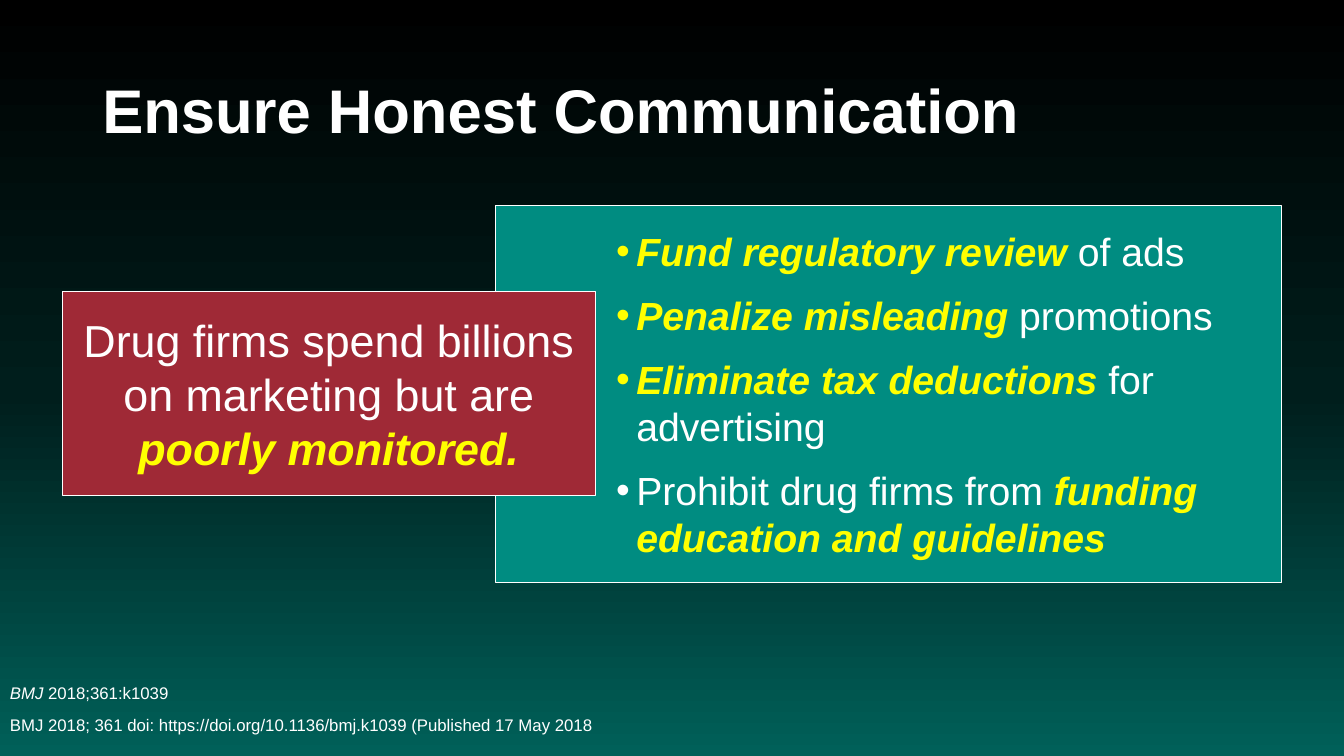
from copy import deepcopy
from dataclasses import dataclass

from lxml import etree
from pptx import Presentation
from pptx.dml.color import RGBColor
from pptx.enum.shapes import MSO_SHAPE
from pptx.enum.text import MSO_ANCHOR, MSO_AUTO_SIZE, PP_ALIGN
from pptx.oxml.ns import qn
from pptx.util import Pt

RECTANGLE = MSO_SHAPE.RECTANGLE
MIDDLE = MSO_ANCHOR.MIDDLE
GROW = MSO_AUTO_SIZE.SHAPE_TO_FIT_TEXT
LEFT = PP_ALIGN.LEFT
CENTER = PP_ALIGN.CENTER


@dataclass(frozen=True)
class Theme:
    font: str = "Arial"
    text: str = "FFFFFF"
    emphasis: str = "FFFF00"
    remedy: str = "008C81"
    problem: str = "9F2936"
    backdrop: tuple = ((0, "000000"), (0.52, "001E1C"), (1, "006059"))
    title_size: int = 44
    problem_size: int = 32
    remedy_size: int = 28
    source_size: int = 12
    outline: float = 0.75
    indent: float = 14.4
    inset: float = 14.4


class SlideBuilder:
    def __init__(self, slide, theme):
        self.slide = slide
        self.theme = theme

    def background(self):
        fill = self.slide.background.fill
        fill.gradient()
        fill.gradient_angle = 270
        stop_list = self.slide.element.find(".//" + qn("a:gsLst"))
        stop_list.append(deepcopy(stop_list[-1]))
        for stop, (position, color) in zip(fill.gradient_stops, self.theme.backdrop):
            stop.position = position
            stop.color.rgb = RGBColor.from_string(color)

    def add_phrases(self, paragraph, phrases, size):
        for words, style in phrases:
            run = paragraph.add_run()
            run.text = words
            font = run.font
            font.name = self.theme.font
            font.size = Pt(size)
            font.bold = style in ("bold", "emphasis")
            font.italic = style in ("italic", "emphasis")
            color = self.theme.emphasis if style == "emphasis" else self.theme.text
            font.color.rgb = RGBColor.from_string(color)

    def paragraphs(self, frame, lines):
        for index, phrases in enumerate(lines):
            yield frame.paragraphs[0] if index == 0 else frame.add_paragraph(), phrases

    def text(self, bounds, lines, size, gap=0):
        frame = self.slide.shapes.add_textbox(*map(Pt, bounds)).text_frame
        frame.word_wrap = True
        frame.vertical_anchor = MIDDLE
        for index, (paragraph, phrases) in enumerate(self.paragraphs(frame, lines)):
            paragraph.line_spacing = 0.9
            if index:
                paragraph.space_before = Pt(gap)
            self.add_phrases(paragraph, phrases, size)

    def panel(self, bounds, color, lines, size, left_inset, align=LEFT, bullets=False):
        panel = self.slide.shapes.add_shape(RECTANGLE, *map(Pt, bounds))
        panel.shadow.inherit = False
        panel.fill.solid()
        panel.fill.fore_color.rgb = RGBColor.from_string(color)
        panel.line.color.rgb = RGBColor.from_string(self.theme.text)
        panel.line.width = Pt(self.theme.outline)
        frame = panel.text_frame
        frame.word_wrap = True
        frame.auto_size = GROW
        frame.vertical_anchor = MIDDLE
        frame.margin_left = Pt(left_inset)
        frame.margin_top = frame.margin_right = frame.margin_bottom = Pt(self.theme.inset)
        for paragraph, phrases in self.paragraphs(frame, lines):
            paragraph.alignment = align
            if bullets:
                self.bullet(paragraph)
            self.add_phrases(paragraph, phrases, size)

    def bullet(self, paragraph):
        paragraph.space_after = Pt(12)
        properties = paragraph._p.get_or_add_pPr()
        properties.set("marL", str(Pt(self.theme.indent)))
        properties.set("indent", str(-Pt(self.theme.indent)))
        etree.SubElement(properties, qn("a:buFont"), typeface=self.theme.font)
        etree.SubElement(properties, qn("a:buChar"), char="•")


def main():
    presentation = Presentation()
    presentation.slide_width = Pt(960)
    presentation.slide_height = Pt(540)
    theme = Theme()
    slide = presentation.slides.add_slide(presentation.slide_layouts[6])
    builder = SlideBuilder(slide, theme)

    builder.background()
    builder.text(
        (66, 28.8, 828, 104.4),
        [[("Ensure Honest Communication", "bold")]],
        theme.title_size,
    )
    sources = [
        [("BMJ", "italic"), (" 2018;361:k1039", "plain")],
        [("BMJ 2018; 361 doi: https://doi.org/10.1136/bmj.k1039 (Published 17 May 2018", "plain")],
    ]
    builder.text((0, 473.8, 648, 66.2), sources, theme.source_size, gap=10)

    remedies = [
        [("Fund regulatory review ", "emphasis"), ("of ads", "plain")],
        [("Penalize misleading ", "emphasis"), ("promotions", "plain")],
        [("Eliminate tax deductions ", "emphasis"), ("for advertising", "plain")],
        [("Prohibit drug firms from ", "plain"), ("funding education and guidelines", "emphasis")],
    ]
    builder.panel(
        (353.7, 146.8, 561.6, 269), theme.remedy, remedies, theme.remedy_size,
        left_inset=86.4, bullets=True,
    )
    problem = [
        [
            ("Drug firms spend billions on marketing but are ", "plain"),
            ("poorly monitored.", "emphasis"),
        ]
    ]
    builder.panel(
        (44.5, 208.5, 381, 145.4), theme.problem, problem, theme.problem_size,
        left_inset=theme.inset, align=CENTER,
    )
    presentation.save("out.pptx")


if __name__ == "__main__":
    main()
